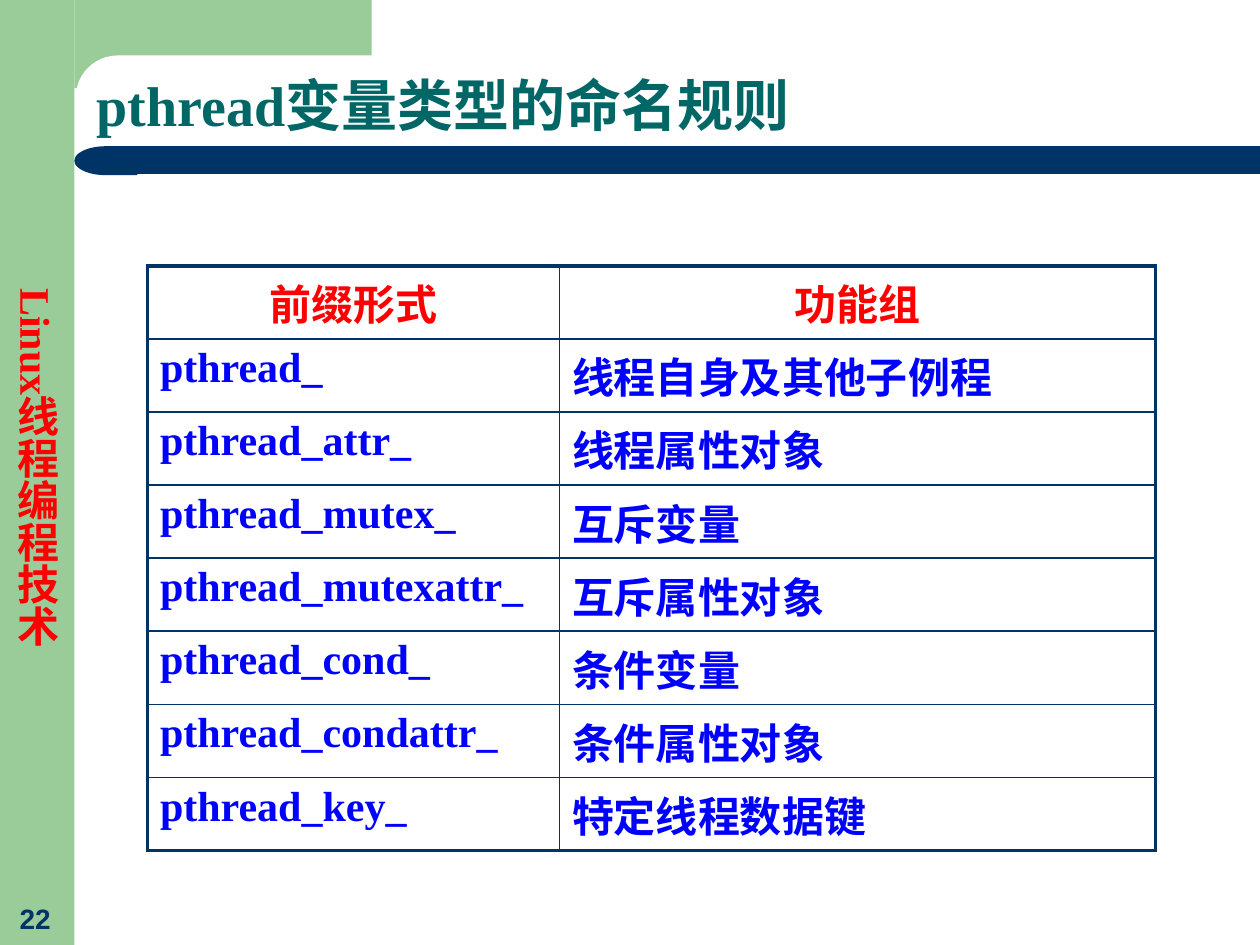
"""Build the slide on pthread type naming rules."""
from lxml import etree
from pptx import Presentation
from pptx.dml.color import RGBColor
from pptx.enum.shapes import MSO_SHAPE
from pptx.enum.text import MSO_ANCHOR, PP_ALIGN
from pptx.oxml.ns import qn
from pptx.util import Inches, Pt

RECT, ROUND, DELAY = MSO_SHAPE.RECTANGLE, MSO_SHAPE.ROUNDED_RECTANGLE, MSO_SHAPE.FLOWCHART_DELAY
LEFT, CENTER = PP_ALIGN.LEFT, PP_ALIGN.CENTER
BOTTOM = MSO_ANCHOR.BOTTOM

GREEN, NAVY, TEAL, RED, BLUE, WHITE = "99CC99", "003366", "006666", "FF0000", "0000FF", "FFFFFF"
SERIF, SANS = "Times New Roman", "Arial"

DECORATION = [
    (RECT, (0, 0, 0.59, 7.5), GREEN, 0),
    (RECT, (0.59, -0.01, 2.36, 0.71), GREEN, 0),
    (ROUND, (0.6, 0.44, 5.58, 0.67), WHITE, 0),
    (RECT, (1.08, 1.16, 8.92, 0.22), NAVY, 0),
    (DELAY, (0.59, 1.16, 0.5, 0.23), NAVY, 180),
]
LABELS = [
    ("22", (-0.04, 7.1, 0.64, 0.37), 16, SANS, NAVY, CENTER, 1, "horz"),
    ("pthread变量类型的命名规则", (0.67, 0.44, 9.14, 0.71), 32, SERIF, TEAL, LEFT, 0.9, "horz"),
    ("Linux线程编程技术", (0.04, 2.19, 0.55, 4.24), 24, SERIF, RED, CENTER, 0.9, "eaVert"),
]
RULES = [
    ("前缀形式", "功能组"),
    ("pthread_", "线程自身及其他子例程"),
    ("pthread_attr_", "线程属性对象"),
    ("pthread_mutex_", "互斥变量"),
    ("pthread_mutexattr_", "互斥属性对象"),
    ("pthread_cond_", "条件变量"),
    ("pthread_condattr_", "条件属性对象"),
    ("pthread_key_", "特定线程数据键"),
]
TABLE_LEFT, TABLE_TOP, ROW_HEIGHT = 1.17, 2.11, 0.58
COLUMN_WIDTHS = (3.27, 4.73)
OUTER, INNER = 2.25, 1


def rgb(color):
    return RGBColor.from_string(color)


def write(frame, words, size, face, color, align):
    paragraph = frame.paragraphs[0]
    paragraph.alignment = align
    run = paragraph.add_run()
    run.text = words
    for key, value in {"size": Pt(size), "name": face, "bold": True}.items():
        setattr(run.font, key, value)
    run.font.color.rgb = rgb(color)
    return paragraph


def add_decoration(slide, kind, box, color, turn):
    shape = slide.shapes.add_shape(kind, *map(Inches, box))
    shape.shadow.inherit = False
    shape.fill.solid()
    shape.fill.fore_color.rgb = rgb(color)
    shape.line.fill.background()
    shape.rotation = turn
    if kind == ROUND:
        shape.adjustments[0] = 0.5


def add_label(slide, words, box, size, face, color, align, spacing, direction):
    frame = slide.shapes.add_textbox(*map(Inches, box)).text_frame
    frame.word_wrap = True
    frame.vertical_anchor = BOTTOM
    frame._txBody.bodyPr.set("vert", direction)
    write(frame, words, size, face, color, align).line_spacing = spacing


def add_borders(cell, widths):
    properties = cell._tc.get_or_add_tcPr()
    for position, (side, width) in enumerate(widths.items()):
        line = etree.Element(qn(f"a:ln{side}"), w=str(Pt(width)))
        fill = etree.SubElement(line, qn("a:solidFill"))
        etree.SubElement(fill, qn("a:srgbClr"), val=NAVY)
        properties.insert(position, line)


def add_rules(slide):
    last_row, last_column = len(RULES) - 1, len(COLUMN_WIDTHS) - 1
    table = slide.shapes.add_table(
        len(RULES), len(COLUMN_WIDTHS), Inches(TABLE_LEFT), Inches(TABLE_TOP),
        Inches(sum(COLUMN_WIDTHS)), Inches(ROW_HEIGHT * len(RULES))).table
    table.horz_banding = False
    for column, width in zip(table.columns, COLUMN_WIDTHS):
        column.width = Inches(width)
    for r, rule in enumerate(RULES):
        color, align = (BLUE, LEFT) if r else (RED, CENTER)
        for c, words in enumerate(rule):
            cell = table.cell(r, c)
            cell.fill.background()
            write(cell.text_frame, words, 24, SERIF, color, align)
            edges = {"L": c == 0, "R": c == last_column, "T": r == 0, "B": r == last_row}
            add_borders(cell, {side: OUTER if edge else INNER for side, edge in edges.items()})


def main():
    deck = Presentation()
    deck.slide_width, deck.slide_height = Inches(10), Inches(7.5)
    slide = deck.slides.add_slide(deck.slide_layouts[6])
    for decoration in DECORATION:
        add_decoration(slide, *decoration)
    for label in LABELS:
        add_label(slide, *label)
    add_rules(slide)
    deck.save("out.pptx")


if __name__ == "__main__":
    main()
